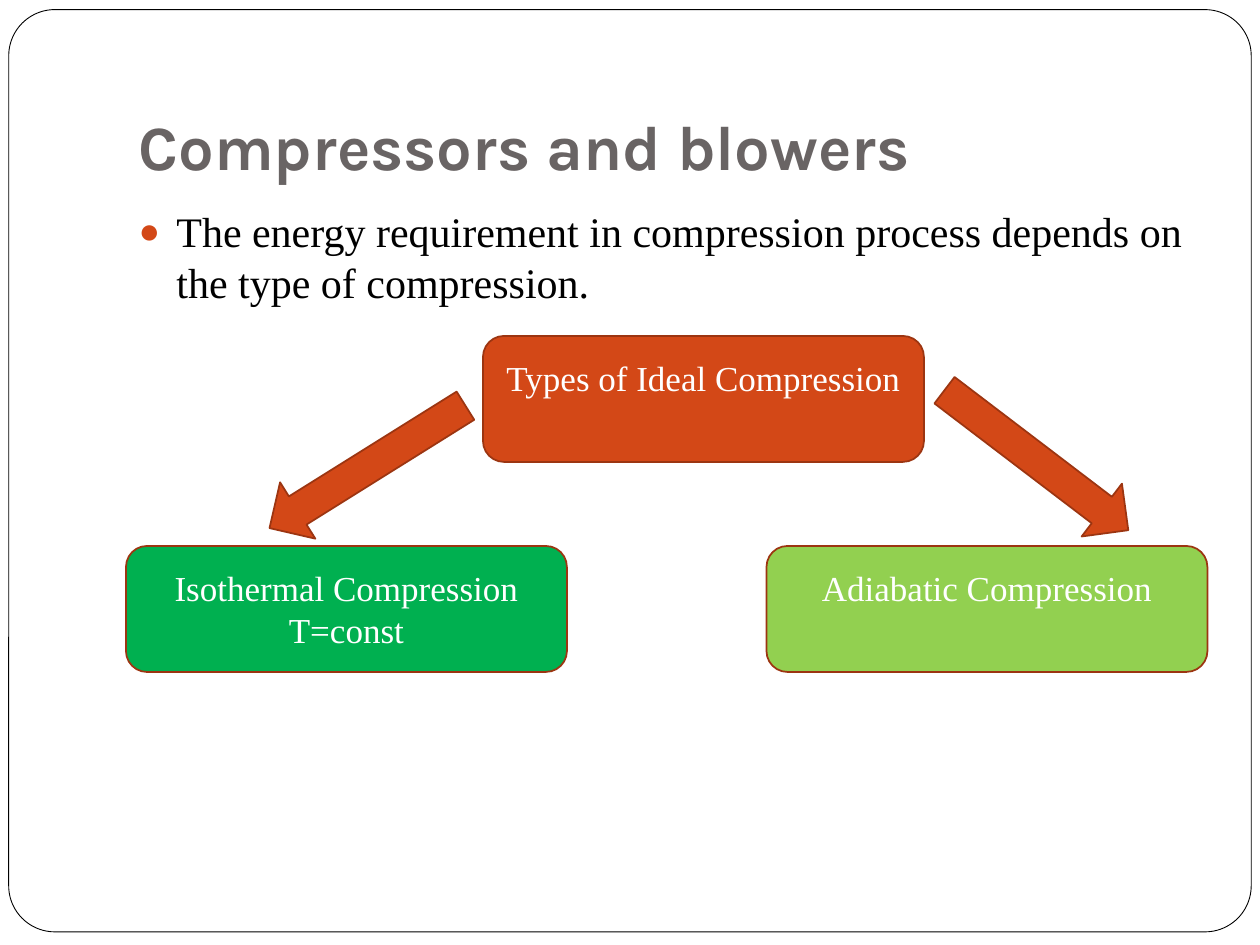
"""Build a slide on the types of ideal compression."""
from lxml.etree import SubElement
from pptx import Presentation
from pptx.dml.color import RGBColor
from pptx.enum.shapes import MSO_SHAPE as Shape
from pptx.enum.text import MSO_ANCHOR as Anchor, MSO_AUTO_SIZE as AutoSize, PP_ALIGN as Align
from pptx.oxml.ns import qn
from pptx.util import Pt

COLORS = {
    "white": "FFFFFF", "black": "000000", "title": "696464", "accent": "D34817",
    "border": "9C3511", "isothermal": "00B050", "adiabatic": "92D050",
}
SERIF = "Times New Roman"


def color(name):
    return RGBColor.from_string(COLORS[name])


def write(frame, *lines, size=20, font=SERIF, ink="white", bold=False,
          align=Align.CENTER, anchor=Anchor.MIDDLE):
    frame.word_wrap = True
    frame.auto_size = AutoSize.NONE
    frame.vertical_anchor = anchor
    for index, line in enumerate(lines):
        para = frame.add_paragraph() if index else frame.paragraphs[0]
        para.alignment = align
        span = para.add_run()
        span.text = line
        span.font.size, span.font.name, span.font.bold = Pt(size), font, bold
        span.font.color.rgb = color(ink)


class SlideBuilder:
    def __init__(self, page):
        self.page = page
        self.box_size = (252, 72)
        self.arrow_size = (132, 38)

    def place(self, item, left, top, width, height):
        item.left, item.top, item.width, item.height = map(Pt, (left, top, width, height))

    def shape(self, kind, position, fill, line="border", weight=1):
        item = self.page.shapes.add_shape(kind, *map(Pt, position))
        item.shadow.inherit = False
        item.fill.solid()
        item.fill.fore_color.rgb = color(fill)
        item.line.color.rgb = color(line)
        item.line.width = Pt(weight)
        return item

    def frame(self):
        border = self.shape(Shape.ROUNDED_RECTANGLE, (5, 5.5, 710, 527), "white", "black", 0.5)
        border.adjustments[0] = 0.05
        self.page.shapes.title._element.addprevious(border._element)

    def title(self, text):
        title = self.page.shapes.title
        self.place(title, 72, 21.6, 612, 90)
        write(title.text_frame, text, size=36, font="Karla", ink="title", bold=True,
              align=Align.LEFT, anchor=Anchor.BOTTOM)
        title.text_frame.margin_bottom = Pt(7.2)

    def bullets(self, *lines):
        body = self.page.placeholders[1]
        self.place(body, 72, 114, 612, 360)
        write(body.text_frame, *lines, size=24, ink="black", align=Align.LEFT, anchor=Anchor.TOP)
        for para in body.text_frame.paragraphs:
            para.space_before = Pt(5.8)
            properties = para._p.get_or_add_pPr()
            properties.set("marL", str(Pt(21.6)))
            properties.set("indent", str(Pt(-21.6)))
            bullet_color = SubElement(properties, qn("a:buClr"))
            SubElement(bullet_color, qn("a:srgbClr"), val=COLORS["accent"])
            SubElement(properties, qn("a:buSzPct"), val="85000")
            SubElement(properties, qn("a:buChar"), char="●")

    def box(self, left, top, fill, *lines):
        box = self.shape(Shape.ROUNDED_RECTANGLE, (left, top, *self.box_size), fill)
        write(box.text_frame, *lines)
        if len(lines) == 1:
            box.text_frame.margin_bottom = Pt(28)

    def arrow(self, left, top, angle):
        arrow = self.shape(Shape.RIGHT_ARROW, (left, top, *self.arrow_size), "accent")
        arrow.rotation = angle


def main():
    deck = Presentation()
    deck.slide_width, deck.slide_height = Pt(720), Pt(540)
    builder = SlideBuilder(deck.slides.add_slide(deck.slide_layouts[1]))
    builder.frame()
    builder.title("Compressors and blowers")
    builder.bullets("The energy requirement in compression process depends on "
                    "the type of compression.")
    builder.box(72, 312, "isothermal", "Isothermal Compression", "T=const")
    builder.box(438, 312, "adiabatic", "Adiabatic Compression")
    builder.box(276, 192, "accent", "Types of Ideal Compression")
    builder.arrow(144, 247.8, 148)
    builder.arrow(526.2, 244, 37.3)
    deck.save("out.pptx")


if __name__ == "__main__":
    main()
